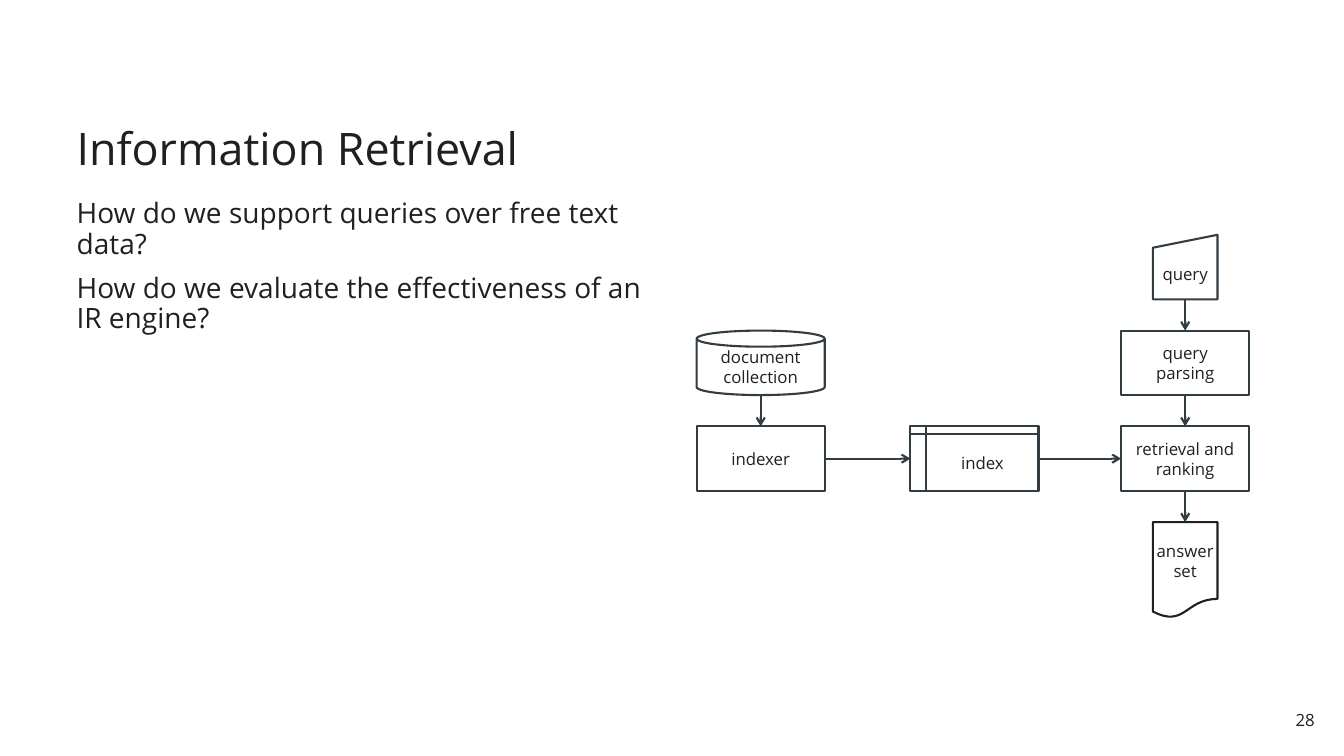
from collections import namedtuple
from dataclasses import dataclass

from lxml.etree import SubElement
from pptx import Presentation
from pptx.dml.color import RGBColor
from pptx.enum.shapes import MSO_CONNECTOR, MSO_SHAPE as Shape
from pptx.enum.text import MSO_ANCHOR as Anchor, PP_ALIGN as Align
from pptx.oxml.ns import qn
from pptx.util import Pt

EMU_PER_PX = 9144  # 100 px to the inch

Box = namedtuple("Box", "left top width height")


@dataclass(frozen=True)
class Theme:
    font: str = "Open Sans"
    ink: RGBColor = RGBColor(0x23, 0x1F, 0x20)
    outline: RGBColor = RGBColor(0x32, 0x3D, 0x43)
    paper: RGBColor = RGBColor(0xFF, 0xFF, 0xFF)
    title_size: int = 32
    body_size: int = 20
    label_size: int = 12
    line_width: float = 1.5


THEME = Theme()


def px(*lengths):
    return [round(length * EMU_PER_PX) for length in lengths]


def write_text(frame, lines, size, align=Align.LEFT, anchor=Anchor.TOP,
               insets=(8, 4), spacing=1.0, gap=0):
    """Fill a text frame with one paragraph per line, gap points apart."""
    frame.word_wrap = True
    frame.vertical_anchor = anchor
    side, end = px(*insets)
    frame.margin_left = frame.margin_right = side
    frame.margin_top = frame.margin_bottom = end
    for number, line in enumerate(lines):
        para = frame.add_paragraph() if number else frame.paragraphs[0]
        para.alignment = align
        para.line_spacing = spacing
        if number:
            para.space_before = Pt(gap)
        span = para.add_run()
        span.text = line
        span.font.name = THEME.font
        span.font.size = Pt(size)
        span.font.color.rgb = THEME.ink


def add_text(page, box, lines, size, **layout):
    frame = page.shapes.add_textbox(*px(*box)).text_frame
    write_text(frame, lines, size, **layout)


def add_node(page, box, kind, label, outline=THEME.outline):
    node = page.shapes.add_shape(kind, *px(*box))
    node.shadow.inherit = False
    node.fill.solid()
    node.fill.fore_color.rgb = THEME.paper
    node.line.color.rgb = outline
    node.line.width = Pt(THEME.line_width)
    write_text(node.text_frame, label.split("\n"), THEME.label_size,
               Align.CENTER, Anchor.MIDDLE, insets=(0, 0))


def add_arrow(page, start, end):
    arrow = page.shapes.add_connector(MSO_CONNECTOR.STRAIGHT,
                                      *px(*start, *end))
    arrow.line.color.rgb = THEME.outline
    arrow.line.width = Pt(THEME.line_width)
    properties = arrow._element.spPr
    SubElement(properties.find(qn("a:ln")), qn("a:tailEnd"), type="arrow")
    SubElement(properties, qn("a:effectLst"))


def arrow_down(page, upper, lower):
    x = upper.left + upper.width / 2
    add_arrow(page, (x, upper.top + upper.height), (x, lower.top))


def arrow_right(page, source, target):
    y = source.top + source.height / 2
    add_arrow(page, (source.left + source.width, y), (target.left, y))


def add_retrieval_flow(page, box):
    """Draw indexing on the left feeding the query pipeline on the right."""
    wide, narrow, high, row_pitch = 127, 64, 64, 95
    columns = (box.left, box.left + 212, box.left + box.width - wide)

    def cell(column, row, width=wide, height=high):
        left = columns[column] + (wide - width) / 2
        return Box(left, box.top + row * row_pitch, width, height)

    collection, indexer, index = cell(0, 1), cell(0, 2), cell(1, 2)
    query, parsing, ranking = cell(2, 0, narrow), cell(2, 1), cell(2, 2)
    answer = cell(2, 3, narrow, 95)

    add_node(page, collection, Shape.CAN, "document collection")
    add_node(page, indexer, Shape.FLOWCHART_PROCESS, "indexer")
    add_node(page, index, Shape.FLOWCHART_INTERNAL_STORAGE, "index")
    add_node(page, query, Shape.FLOWCHART_MANUAL_INPUT, "query")
    add_node(page, parsing, Shape.FLOWCHART_PROCESS, "query\nparsing")
    add_node(page, ranking, Shape.FLOWCHART_PROCESS, "retrieval and ranking")
    add_node(page, answer, Shape.FLOWCHART_DOCUMENT, "answer\nset", THEME.ink)

    pipeline = (query, parsing, ranking, answer)
    for upper, lower in [(collection, indexer), *zip(pipeline, pipeline[1:])]:
        arrow_down(page, upper, lower)
    for source, target in [(indexer, index), (index, ranking)]:
        arrow_right(page, source, target)


def add_heading(page, box, title):
    add_text(page, box, [title], THEME.title_size, anchor=Anchor.BOTTOM,
             spacing=0.9)


def add_questions(page, box, questions):
    add_text(page, box, questions, THEME.body_size, spacing=0.9, gap=10)


def add_page_number(page, box, number):
    add_text(page, box, [number], THEME.label_size, align=Align.RIGHT,
             insets=(8, 6))


def main():
    deck = Presentation()
    deck.slide_width, deck.slide_height = px(1333, 750)
    page = deck.slides.add_slide(deck.slide_layouts[6])
    add_heading(page, Box(68, 76, 1197, 102), "Information Retrieval")
    add_questions(page, Box(68, 194, 591, 488), [
        "How do we support queries over free text data?",
        "How do we evaluate the effectiveness of an IR engine?",
    ])
    add_retrieval_flow(page, Box(691, 233, 548, 381))
    add_page_number(page, Box(1265, 698, 47, 31), "28")
    deck.save("out.pptx")


if __name__ == "__main__":
    main()
